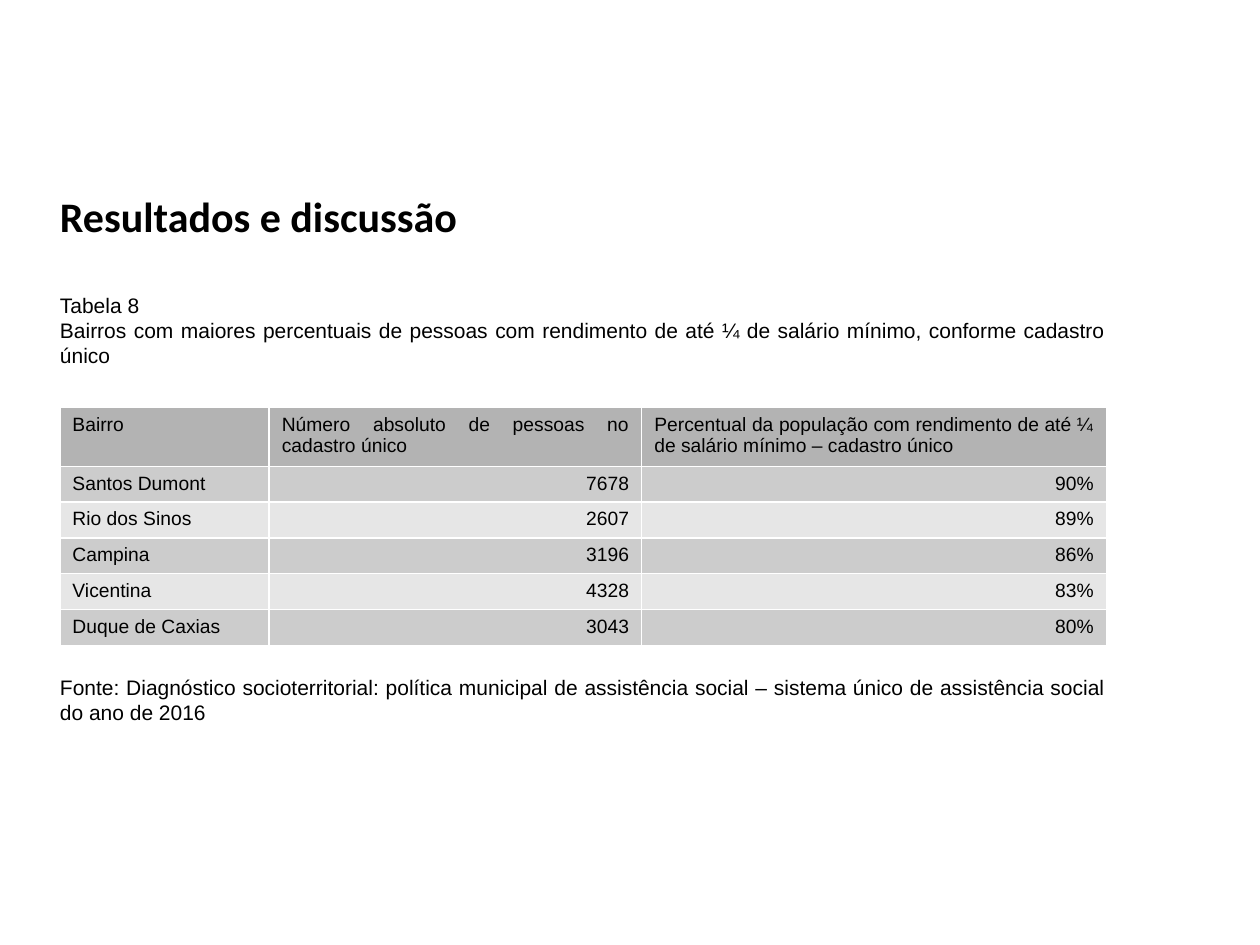
from dataclasses import dataclass

from lxml import etree
from pptx import Presentation
from pptx.dml.color import RGBColor
from pptx.enum import text
from pptx.oxml.ns import qn
from pptx.util import Pt


@dataclass(frozen=True)
class Theme:
    ink: str = "000000"
    border: str = "FFFFFF"
    header: str = "B3B3B3"
    bands: tuple = ("CCCCCC", "E6E6E6")
    title_font: str = "Calibri"
    body_font: str = "Arial"
    title_size: float = 24
    body_size: float = 12
    table_size: float = 11


THEME = Theme()
ALIGN = text.PP_ALIGN

HEADERS = (
    "Bairro",
    "Número absoluto de pessoas no cadastro único",
    "Percentual da população com rendimento de até ¼ de salário mínimo – cadastro único",
)
DISTRICTS = (
    ("Santos Dumont", "7678", "90%"),
    ("Rio dos Sinos", "2607", "89%"),
    ("Campina", "3196", "86%"),
    ("Vicentina", "4328", "83%"),
    ("Duque de Caxias", "3043", "80%"),
)
CAPTION = (
    "Bairros com maiores percentuais de pessoas com rendimento de até ¼ "
    "de salário mínimo, conforme cadastro único"
)
SOURCE = (
    "Fonte: Diagnóstico socioterritorial: política municipal de assistência social – "
    "sistema único de assistência social do ano de 2016"
)


def add_run(p, content, size, font, bold=False):
    r = p.add_run()
    r.text = content
    r.font.size = Pt(size)
    r.font.name = font
    r.font.bold = bold
    r.font.color.rgb = RGBColor.from_string(THEME.ink)


def add_body(s, left, top, width, height):
    tf = s.shapes.add_textbox(Pt(left), Pt(top), Pt(width), Pt(height)).text_frame
    tf.word_wrap = True
    p = tf.paragraphs[0]
    p.line_spacing = 0.9
    add_run(p, "Resultados e discussão", THEME.title_size, THEME.title_font, True)
    for content, gap in (("Tabela 8", 29), (CAPTION, 0), (SOURCE, 175)):
        p = tf.add_paragraph()
        p.alignment = ALIGN.JUSTIFY
        p.space_before = Pt(gap)
        add_run(p, content, THEME.body_size, THEME.body_font)


def set_borders(cell):
    tc_pr = cell._tc.get_or_add_tcPr()
    for index, side in enumerate(("a:lnL", "a:lnR", "a:lnT", "a:lnB")):
        ln = etree.Element(qn(side), w=str(Pt(1)))
        fill = etree.SubElement(ln, qn("a:solidFill"))
        etree.SubElement(fill, qn("a:srgbClr"), val=THEME.border)
        tc_pr.insert(index, ln)


def fill_cell(cell, content, color, alignment):
    cell.fill.solid()
    cell.fill.fore_color.rgb = RGBColor.from_string(color)
    set_borders(cell)
    p = cell.text_frame.paragraphs[0]
    p.alignment = alignment
    add_run(p, content, THEME.table_size, THEME.body_font)


def add_district_table(s, left, top, width, height):
    rows = (HEADERS, *DISTRICTS)
    header_height = 31
    row_height = (height - header_height) / len(DISTRICTS)
    table = s.shapes.add_table(
        len(rows), len(HEADERS), Pt(left), Pt(top), Pt(width), Pt(height)
    ).table
    shares = (0.2, 0.356, 0.444)
    for column, share in zip(table.columns, shares):
        column.width = Pt(width * share)
    for i, values in enumerate(rows):
        table.rows[i].height = Pt(row_height if i else header_height)
        color = THEME.bands[(i - 1) % 2] if i else THEME.header
        for j, value in enumerate(values):
            alignment = ALIGN.LEFT
            if j:
                alignment = ALIGN.RIGHT if i else ALIGN.JUSTIFY
            fill_cell(table.cell(i, j), value, color, alignment)


def main():
    prs = Presentation()
    prs.slide_width, prs.slide_height = Pt(720), Pt(540)
    s = prs.slides.add_slide(prs.slide_layouts[6])
    add_body(s, 27.2, 108.7, 612, 374.4)
    add_district_table(s, 34.2, 232.9, 598, 128)
    prs.save("out.pptx")


if __name__ == "__main__":
    main()
